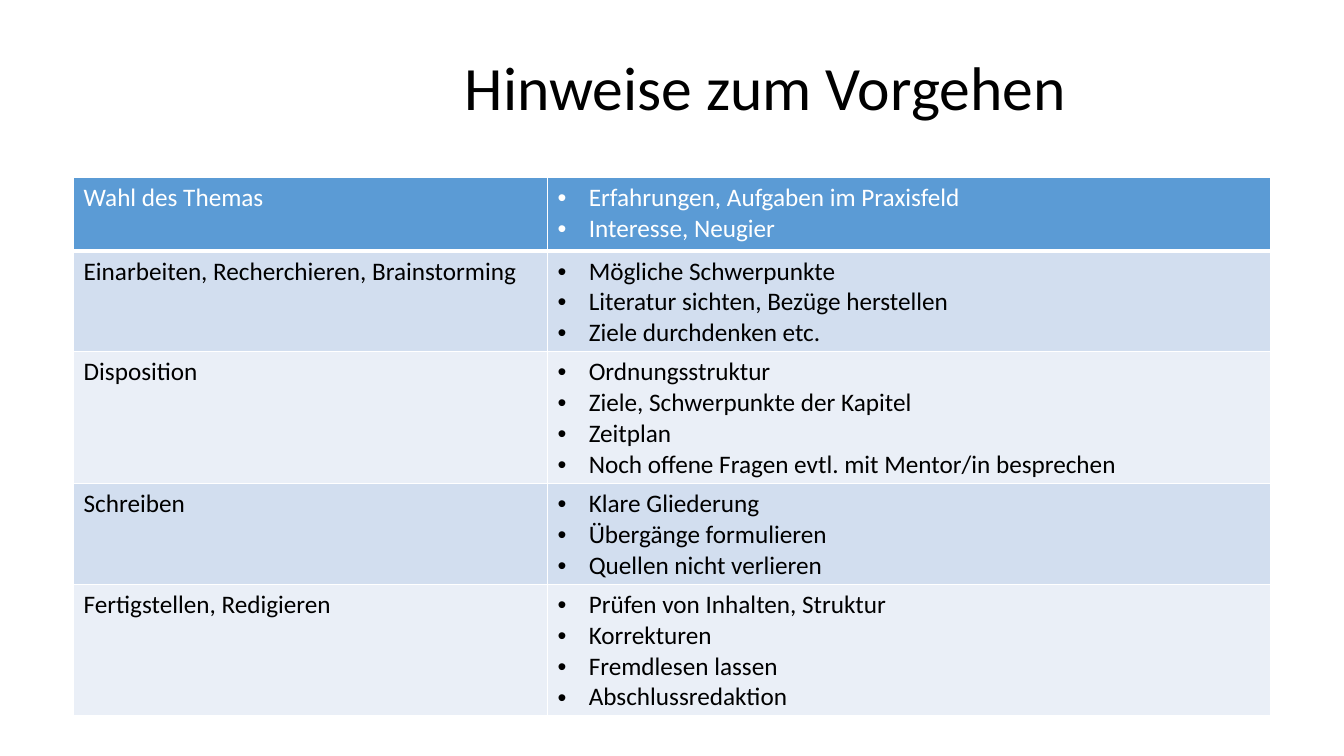
from dataclasses import dataclass

from lxml import etree
from pptx import Presentation
from pptx.dml.color import RGBColor
from pptx.enum.text import MSO_ANCHOR
from pptx.oxml.ns import qn
from pptx.util import Inches, Pt

MIDDLE = MSO_ANCHOR.MIDDLE


@dataclass(frozen=True)
class Theme:
    font: str = "Calibri"
    title: int = 44
    body: int = 18
    black: str = "000000"
    white: str = "FFFFFF"
    head: str = "5B9BD5"
    bands: tuple = ("EAEFF7", "D2DEEF")


theme = Theme()

STEPS = [
    ("Wahl des Themas", 0.73,
     ["Erfahrungen, Aufgaben im Praxisfeld", "Interesse, Neugier"]),
    ("Einarbeiten, Recherchieren, Brainstorming", 0.92,
     ["Mögliche Schwerpunkte", "Literatur sichten, Bezüge herstellen",
      "Ziele durchdenken etc."]),
    ("Disposition", 1.31,
     ["Ordnungsstruktur", "Ziele, Schwerpunkte der Kapitel", "Zeitplan",
      "Noch offene Fragen evtl. mit Mentor/in besprechen"]),
    ("Schreiben", 1,
     ["Klare Gliederung", "Übergänge formulieren", "Quellen nicht verlieren"]),
    ("Fertigstellen, Redigieren", 1.23,
     ["Prüfen von Inhalten, Struktur", "Korrekturen", "Fremdlesen lassen",
      "Abschlussredaktion"]),
]


def style(para, size, color):
    para.font.name = theme.font
    para.font.size = Pt(size)
    para.font.bold = False
    para.font.color.rgb = RGBColor.from_string(color)


def set_border(cell, side, width):
    line = etree.SubElement(cell._tc.get_or_add_tcPr(), qn(f"a:ln{side}"),
                            w=str(Pt(width)))
    fill = etree.SubElement(line, qn("a:solidFill"))
    etree.SubElement(fill, qn("a:srgbClr"), val=theme.white)


prs = Presentation()
prs.slide_width = Inches(13.33)
prs.slide_height = Inches(7.5)
slide = prs.slides.add_slide(prs.slide_layouts[6])

title = slide.shapes.add_textbox(Inches(4.51), Inches(0.41),
                                 Inches(8.28), Inches(0.98))
frame = title.text_frame
frame.word_wrap = True
frame.vertical_anchor = MIDDLE
frame.text = "Hinweise zum Vorgehen"
frame.paragraphs[0].line_spacing = 0.9
style(frame.paragraphs[0], theme.title, theme.black)

table = slide.shapes.add_table(len(STEPS), 2, Inches(0.73), Inches(1.76),
                               Inches(11.87), Inches(5.19)).table
for column, width in zip(table.columns, (4.7, 7.17)):
    column.width = Inches(width)

for row, (step, height, hints) in enumerate(STEPS):
    table.rows[row].height = Inches(height)
    color = theme.black if row else theme.white
    shade = theme.bands[row % 2] if row else theme.head
    for col, lines in enumerate(([step], hints)):
        cell = table.cell(row, col)
        for side in "LRTB":
            thick = (row, side) in ((0, "B"), (1, "T"))
            set_border(cell, side, 3 if thick else 1)
        cell.fill.solid()
        cell.fill.fore_color.rgb = RGBColor.from_string(shade)
        cell.text = "\n".join(lines)
        for para in cell.text_frame.paragraphs:
            if col == 1:
                props = para._p.get_or_add_pPr()
                props.set("marL", str(Inches(0.31)))
                props.set("indent", str(Inches(-0.31)))
                etree.SubElement(props, qn("a:buFont"), typeface="Arial")
                etree.SubElement(props, qn("a:buChar"), char="•")
            style(para, theme.body, color)

prs.save("out.pptx")
